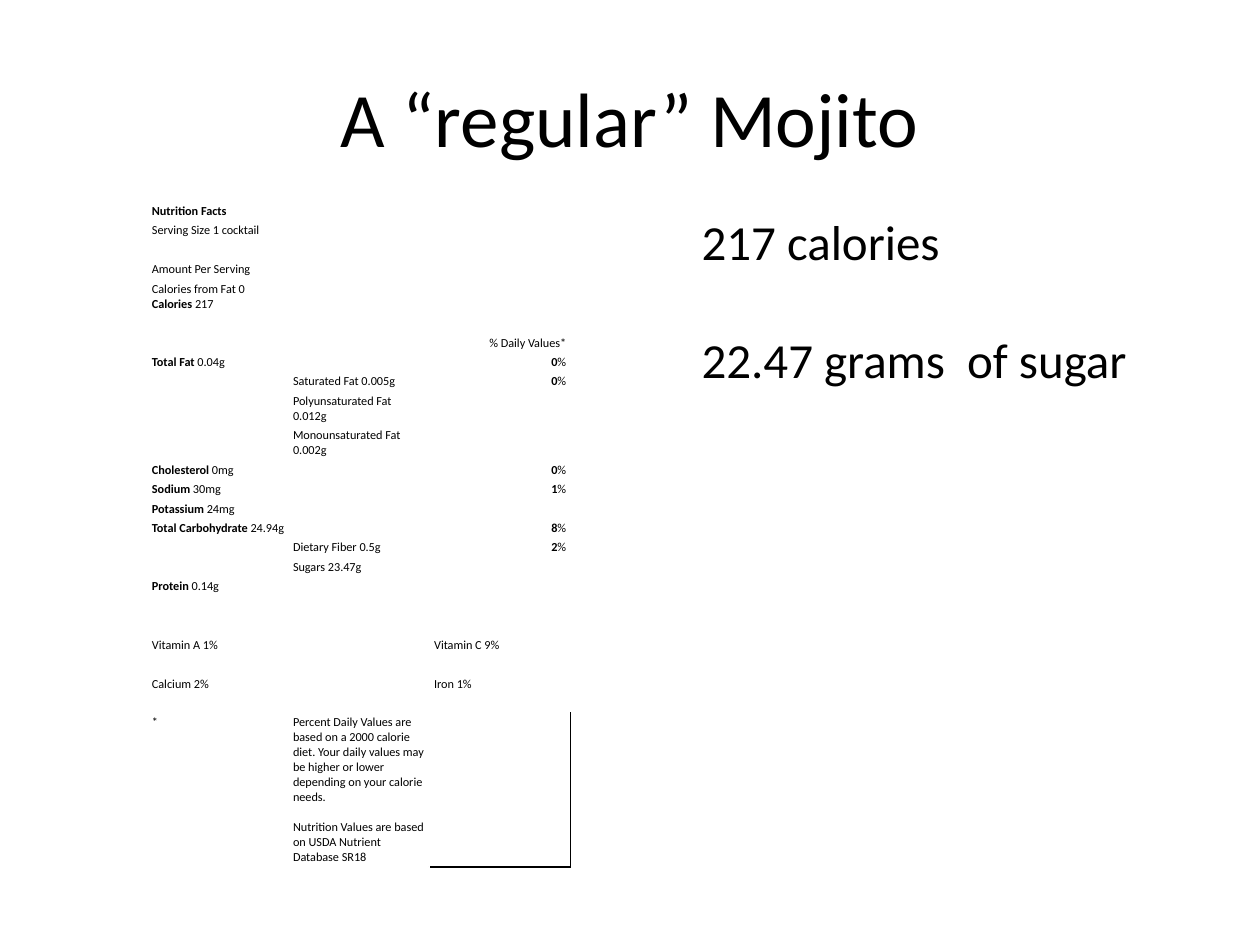
import pptx
import pptx.util
import pptx.dml.color
import pptx.enum.text
import pptx.oxml
import pptx.oxml.ns

Inches = pptx.util.Inches
Pt = pptx.util.Pt
ALIGN = pptx.enum.text.PP_ALIGN
ANCHOR = pptx.enum.text.MSO_ANCHOR
BLACK = pptx.dml.color.RGBColor(0x00, 0x00, 0x00)

FOOTNOTE = (
    "Percent Daily Values are based on a 2000 calorie diet. Your daily values may "
    "be higher or lower depending on your calorie needs. \v\v"
    "Nutrition Values are based on USDA Nutrient Database SR18"
)

# A bar ends the bold part; the leading number is how many columns the first cell spans.
NUTRITION_ROWS = [
    (3, "Nutrition Facts|"),
    (3, "Serving Size 1 cocktail"),
    (3, ""),
    (3, "Amount Per Serving"),
    (3, "Calories from Fat 0\nCalories| 217"),
    (3, ""),
    (3, "% Daily Values*"),
    (2, "Total Fat| 0.04g", "0|%"),
    (1, "", "Saturated Fat 0.005g", "0|%"),
    (1, "", "Polyunsaturated Fat 0.012g", ""),
    (1, "", "Monounsaturated Fat 0.002g", ""),
    (2, "Cholesterol| 0mg", "0|%"),
    (2, "Sodium| 30mg", "1|%"),
    (2, "Potassium| 24mg", ""),
    (2, "Total Carbohydrate| 24.94g", "8|%"),
    (1, "", "Dietary Fiber 0.5g", "2|%"),
    (1, "", "Sugars 23.47g", ""),
    (2, "Protein| 0.14g", ""),
    (3, ""),
    (3, ""),
    (1, "Vitamin A 1%", "", "Vitamin C 9%"),
    (3, ""),
    (1, "Calcium 2%", "", "Iron 1%"),
    (3, ""),
    (1, "*", FOOTNOTE, ""),
]


class NutritionSlide:
    font_name = "Calibri"
    title_size = 44
    body_size = 28
    table_size = 7

    def __init__(self, presentation):
        self.slide = presentation.slides.add_slide(presentation.slide_layouts[5])

    def style(self, paragraph, size, align=ALIGN.LEFT):
        paragraph.alignment = align
        paragraph.font.name = self.font_name
        paragraph.font.size = Pt(size)
        paragraph.font.color.rgb = BLACK

    def title(self, text, left, top, width, height):
        heading = self.slide.shapes.title
        heading.left, heading.top = Inches(left), Inches(top)
        heading.width, heading.height = Inches(width), Inches(height)
        heading.text_frame.text = text
        heading.text_frame.vertical_anchor = ANCHOR.MIDDLE
        self.style(heading.text_frame.paragraphs[0], self.title_size, ALIGN.CENTER)

    def text(self, lines, left, top, width, height, gap):
        box = self.slide.shapes.add_textbox(
            Inches(left), Inches(top), Inches(width), Inches(height))
        frame = box.text_frame
        frame.word_wrap = True
        frame.text = "\n".join(lines)
        for index, paragraph in enumerate(frame.paragraphs):
            self.style(paragraph, self.body_size)
            if index:
                paragraph.space_before = Pt(gap)

    def fill_cell(self, cell, text, anchor):
        cell.fill.background()
        cell.margin_left = cell.margin_right = Pt(2.6)
        cell.margin_top = cell.margin_bottom = Pt(1.3)
        cell.vertical_anchor = anchor
        align = ALIGN.RIGHT if text.endswith(("|%", "Values*")) else ALIGN.LEFT
        cell.text_frame.text = text.replace("|", "")
        for paragraph, line in zip(cell.text_frame.paragraphs, text.split("\n")):
            self.style(paragraph, self.table_size, align)
            bold, bar, plain = line.partition("|")
            if bar:
                paragraph.runs[0].text = bold
                paragraph.runs[0].font.bold = True
                if plain:
                    paragraph.add_run().text = plain

    def border(self, cell, sides, width):
        properties = cell._tc.get_or_add_tcPr()
        for position, side in enumerate(sides):
            properties.insert(position, pptx.oxml.parse_xml(
                f'<a:{side} {pptx.oxml.ns.nsdecls("a")} w="{Pt(width)}"><a:solidFill>'
                f'<a:srgbClr val="{BLACK}"/></a:solidFill></a:{side}>'))

    def table(self, rows, left, top, column_width, row_height):
        columns = 3
        table = self.slide.shapes.add_table(
            len(rows), columns, Inches(left), Inches(top),
            Inches(column_width * columns), Inches(row_height * len(rows))).table
        table.first_row = table.horz_banding = False
        for row_index, (span, *texts) in enumerate(rows):
            last = row_index == len(rows) - 1
            anchor = ANCHOR.TOP if last else ANCHOR.MIDDLE
            texts[1:1] = [""] * (span - 1)
            for column, text in enumerate(texts):
                self.fill_cell(table.cell(row_index, column), text, anchor)
            if span > 1:
                table.cell(row_index, 0).merge(table.cell(row_index, span - 1))
        self.border(table.cell(len(rows) - 1, columns - 1), ("lnR", "lnB"), 1)


def main():
    presentation = pptx.Presentation()
    presentation.slide_width = Inches(10)
    presentation.slide_height = Inches(7.5)
    mojito = NutritionSlide(presentation)
    mojito.title("A “regular” Mojito", 0.5, 0.3, 9, 1.25)
    mojito.table(NUTRITION_ROWS, 1.17, 1.6, 1.12, 0.15)
    mojito.text(["217 calories", "22.47 grams  of sugar"], 5.47, 1.63, 4, 1.51, 34)
    presentation.save("out.pptx")


if __name__ == "__main__":
    main()
